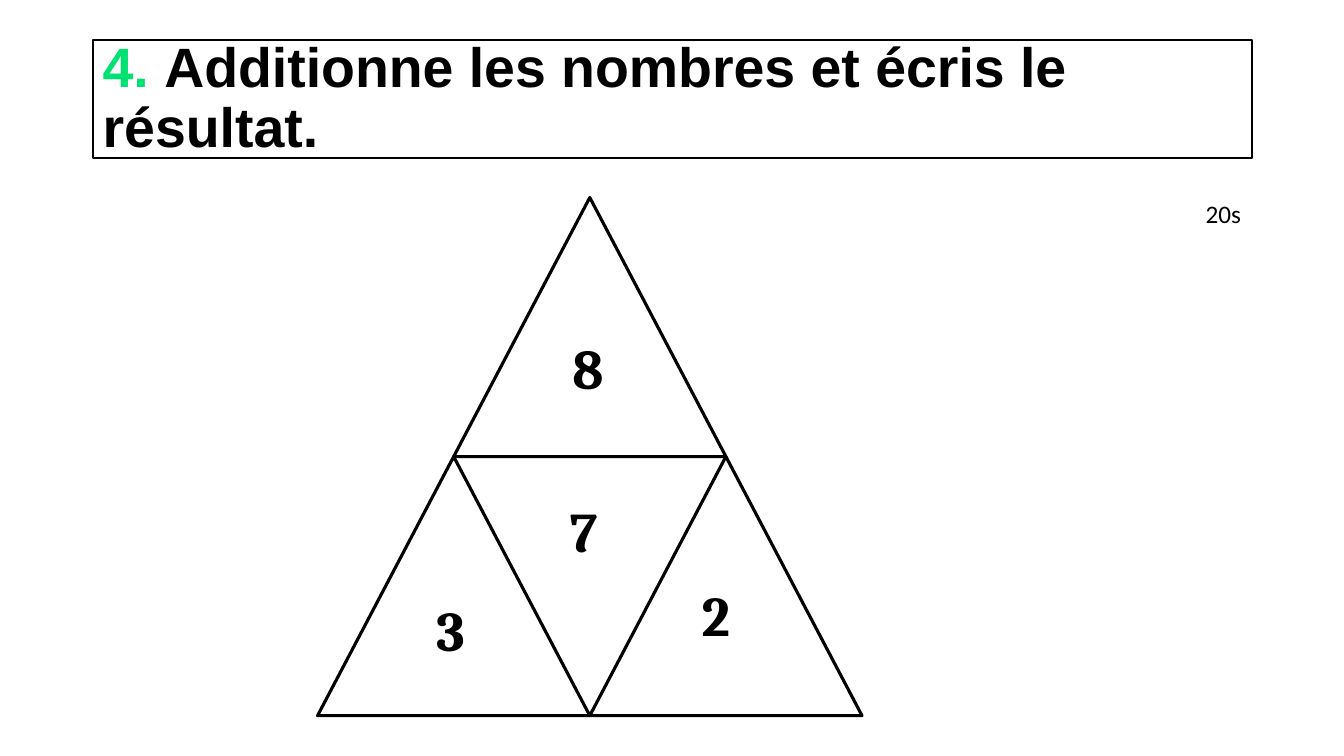
from dataclasses import dataclass
from typing import Optional

from pptx import Presentation
from pptx.dml.color import RGBColor
from pptx.enum.shapes import MSO_SHAPE
from pptx.enum.text import MSO_ANCHOR, PP_ALIGN
from pptx.shapes.autoshape import Shape
from pptx.slide import Slide
from pptx.util import Inches, Pt

TRIANGLE = MSO_SHAPE.ISOSCELES_TRIANGLE
MIDDLE = MSO_ANCHOR.MIDDLE
CENTER = PP_ALIGN.CENTER
LEFT = PP_ALIGN.LEFT


@dataclass(frozen=True)
class Theme:
    ink: RGBColor = RGBColor(0x00, 0x00, 0x00)
    accent: RGBColor = RGBColor(0x00, 0xE1, 0x72)
    title_font: str = "Arial"
    number_font: str = "Cambria"
    timer_font: str = "Calibri"
    title_size: float = 39.6
    number_size: float = 40
    timer_size: float = 18
    title_line: float = 1.5
    triangle_line: float = 2.25


@dataclass(frozen=True)
class Box:
    left: float
    top: float
    width: float
    height: float


@dataclass(frozen=True)
class TextStyle:
    font: str
    size: float
    bold: bool = False
    alignment: Optional[PP_ALIGN] = LEFT
    wrap: bool = True


@dataclass(frozen=True)
class NumberLabel:
    text: str
    left: float
    top: float


THEME = Theme()
TITLE_STYLE = TextStyle(THEME.title_font, THEME.title_size, bold=True)
NUMBER_STYLE = TextStyle(THEME.number_font, THEME.number_size, bold=True, alignment=CENTER)
TIMER_STYLE = TextStyle(THEME.timer_font, THEME.timer_size, wrap=False)

TITLE_BOX = Box(0.92, 0.4, 11.5, 1.17)
TIMER_BOX = Box(11.86, 1.92, 0.56, 0.4)
TITLE_PARTS = (
    ("4. ", THEME.accent),
    ("Additionne les nombres et écris le résultat.", THEME.ink),
)

PYRAMID_LEFT, PYRAMID_TOP = 3.15, 1.96
TRIANGLE_WIDTH, TRIANGLE_HEIGHT = 2.7, 2.57
PYRAMID_ROWS = 2

NUMBER_WIDTH, NUMBER_HEIGHT = 1.02, 0.88
NUMBERS = (
    NumberLabel("7", 5.28, 4.88),
    NumberLabel("2", 6.59, 5.71),
    NumberLabel("8", 5.32, 3.26),
    NumberLabel("3", 3.96, 5.86),
)


def add_text(slide: Slide, box: Box, style: TextStyle,
             parts: tuple[tuple[str, RGBColor], ...]) -> Shape:
    """Add a one-paragraph text box made of (text, colour) parts."""
    shape = slide.shapes.add_textbox(
        Inches(box.left), Inches(box.top), Inches(box.width), Inches(box.height))
    shape.text_frame.word_wrap = style.wrap
    paragraph = shape.text_frame.paragraphs[0]
    paragraph.alignment = style.alignment
    for text, color in parts:
        run = paragraph.add_run()
        run.text = text
        run.font.name = style.font
        run.font.size = Pt(style.size)
        run.font.bold = style.bold
        run.font.color.rgb = color
    return shape


def set_outline(shape: Shape, width: float) -> None:
    shape.line.color.rgb = THEME.ink
    shape.line.width = Pt(width)


def add_title(slide: Slide) -> None:
    title = add_text(slide, TITLE_BOX, TITLE_STYLE, TITLE_PARTS)
    title.text_frame.vertical_anchor = MIDDLE
    title.text_frame.paragraphs[0].line_spacing = 0.9
    set_outline(title, THEME.title_line)


def add_pyramid(slide: Slide) -> None:
    """Stack triangles, one more per row, each row centred under the last."""
    for row in range(PYRAMID_ROWS):
        row_left = PYRAMID_LEFT + (PYRAMID_ROWS - 1 - row) * TRIANGLE_WIDTH / 2
        for column in range(row + 1):
            triangle = slide.shapes.add_shape(
                TRIANGLE,
                Inches(row_left + column * TRIANGLE_WIDTH),
                Inches(PYRAMID_TOP + row * TRIANGLE_HEIGHT),
                Inches(TRIANGLE_WIDTH), Inches(TRIANGLE_HEIGHT))
            triangle.shadow.inherit = False
            triangle.fill.background()
            set_outline(triangle, THEME.triangle_line)


def main() -> None:
    presentation = Presentation()
    presentation.slide_width = Inches(13.33)
    presentation.slide_height = Inches(7.5)
    slide = presentation.slides.add_slide(presentation.slide_layouts[6])

    add_title(slide)
    add_pyramid(slide)
    for number in NUMBERS:
        box = Box(number.left, number.top, NUMBER_WIDTH, NUMBER_HEIGHT)
        add_text(slide, box, NUMBER_STYLE, ((number.text, THEME.ink),))
    add_text(slide, TIMER_BOX, TIMER_STYLE, (("20s", THEME.ink),))

    presentation.save("out.pptx")


if __name__ == "__main__":
    main()
